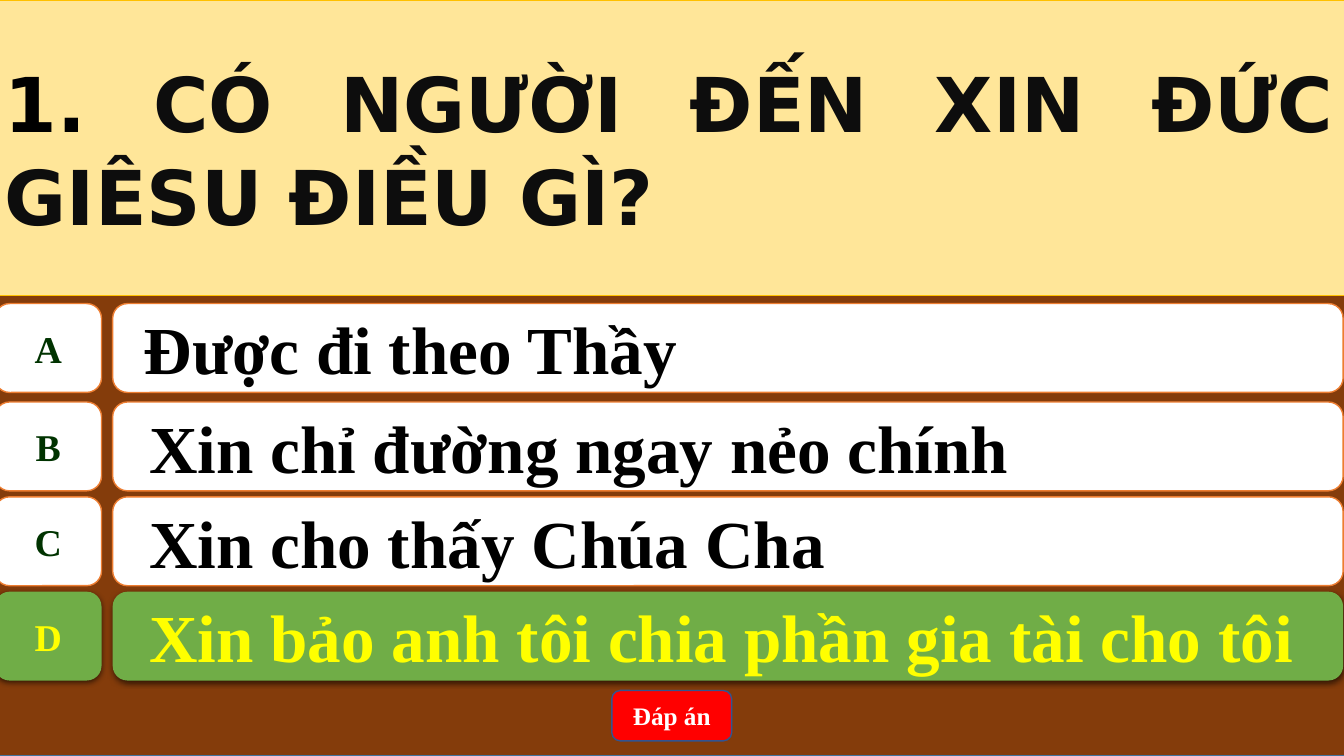
from pptx import Presentation
from pptx.dml.color import RGBColor
from pptx.enum.shapes import MSO_SHAPE as Shape
from pptx.enum.text import MSO_ANCHOR as Anchor, MSO_AUTO_SIZE as Fit, PP_ALIGN as Align
from pptx.oxml import parse_xml
from pptx.oxml.ns import nsdecls
from pptx.util import Cm, Pt

BROWN = RGBColor(0x84, 0x3C, 0x0B)
BLUE = RGBColor(0x43, 0x73, 0x9E)
NAVY = RGBColor(0x32, 0x54, 0x91)
CREAM = RGBColor(0xFF, 0xE6, 0x99)
GOLD = RGBColor(0xFF, 0xC0, 0x00)
ORANGE = RGBColor(0xED, 0x7D, 0x31)
WHITE = RGBColor(0xFF, 0xFF, 0xFF)
BLACK = RGBColor(0x00, 0x00, 0x00)
INK = RGBColor(0x0D, 0x0D, 0x0D)
FOREST = RGBColor(0x00, 0x33, 0x00)
GREEN = RGBColor(0x70, 0xAD, 0x47)
YELLOW = RGBColor(0xFF, 0xFF, 0x00)
RED = RGBColor(0xFF, 0x00, 0x00)

SHADOW = (
    f'<a:effectLst {nsdecls("a")}>'
    '<a:outerShdw blurRad="57150" dist="19050" dir="5400000" algn="ctr" rotWithShape="0">'
    '<a:srgbClr val="000000"><a:alpha val="63000"/></a:srgbClr>'
    '</a:outerShdw></a:effectLst>'
)


def write(shape, *runs, size=48, font="Times New Roman", align=Align.LEFT,
          indent=0, wrap=True, space=1.0):
    """Fill a shape with one bold paragraph of (text, colour) runs."""
    frame = shape.text_frame
    frame.auto_size = Fit.NONE
    frame.word_wrap = wrap
    frame.vertical_anchor = Anchor.MIDDLE
    par = frame.paragraphs[0]
    par.alignment = align
    par.line_spacing = space
    if indent:
        par._p.get_or_add_pPr().set("marL", str(Cm(indent)))
    for text, color in runs:
        run = par.add_run()
        run.text = text
        run.font.size = Pt(size)
        run.font.name = font
        run.font.bold = True
        run.font.color.rgb = color


class Quiz:
    left = -0.13
    full = 34.01
    high = 2.24

    def __init__(self):
        self.deck = Presentation()
        self.deck.slide_width = Cm(33.87)
        self.deck.slide_height = Cm(19.05)
        self.slide = self.deck.slides.add_slide(self.deck.slide_layouts[5])

    def paint(self, shape, fill, line=None, width=1):
        shape.fill.solid()
        shape.fill.fore_color.rgb = fill
        if line is None:
            shape.line.fill.background()
        else:
            shape.line.color.rgb = line
            shape.line.width = Pt(width)

    def box(self, kind, left, top, width, height, fill, line=None, glow=False):
        shape = self.slide.shapes.add_shape(
            kind, Cm(left), Cm(top), Cm(width), Cm(height))
        self.paint(shape, fill, line)
        if glow:
            shape._element.spPr.append(parse_xml(SHADOW))
        else:
            shape.shadow.inherit = False
        return shape

    def title(self, height, *runs):
        shape = self.slide.shapes.title
        shape.left, shape.top = Cm(self.left), Cm(0)
        shape.width, shape.height = Cm(self.full), Cm(height)
        self.paint(shape, CREAM, GOLD, 0.5)
        write(shape, *runs, size=54, font="DejaVu Sans",
              align=Align.JUSTIFY, space=1.03)
        # Bring the title in front of the backdrop
        self.slide.shapes._spTree.append(shape._element)

    def answer(self, top, mark, text, indent, right=False):
        fill, line = (GREEN, None) if right else (WHITE, ORANGE)
        tag = self.box(Shape.FLOWCHART_ALTERNATE_PROCESS, self.left, top,
                       2.69, self.high, fill, line, right)
        write(tag, (mark, YELLOW if right else FOREST), size=27,
              align=Align.CENTER, wrap=False)
        bar = self.box(Shape.ROUNDED_RECTANGLE, 2.84, top,
                       31.01, self.high, fill, line, right)
        write(bar, (text, YELLOW if right else BLACK), indent=indent)


def main():
    quiz = Quiz()

    # Backdrop
    quiz.box(Shape.RECTANGLE, quiz.left, 0, quiz.full, 19.05, BROWN, BLUE)

    # Question
    quiz.title(7.44, ("1. ", BLACK),
               ("CÓ NGƯỜI ĐẾN XIN ĐỨC GIÊSU ĐIỀU GÌ?", INK))

    # Answers
    quiz.answer(7.65, "A", "Được đi theo Thầy", 0.42)
    quiz.answer(10.13, "B", "Xin chỉ đường ngay nẻo chính", 0.56)
    quiz.answer(12.52, "C", "Xin cho thấy Chúa Cha", 0.56)
    quiz.answer(14.91, "D", "Xin bảo anh tôi chia phần gia tài cho tôi",
                0.56, right=True)

    # Answer button
    key = quiz.box(Shape.ROUNDED_RECTANGLE, 15.42, 17.4, 3.02, 1.27, RED, NAVY)
    write(key, ("Đáp án", WHITE), size=18, align=Align.CENTER)

    quiz.deck.save("out.pptx")


if __name__ == "__main__":
    main()
